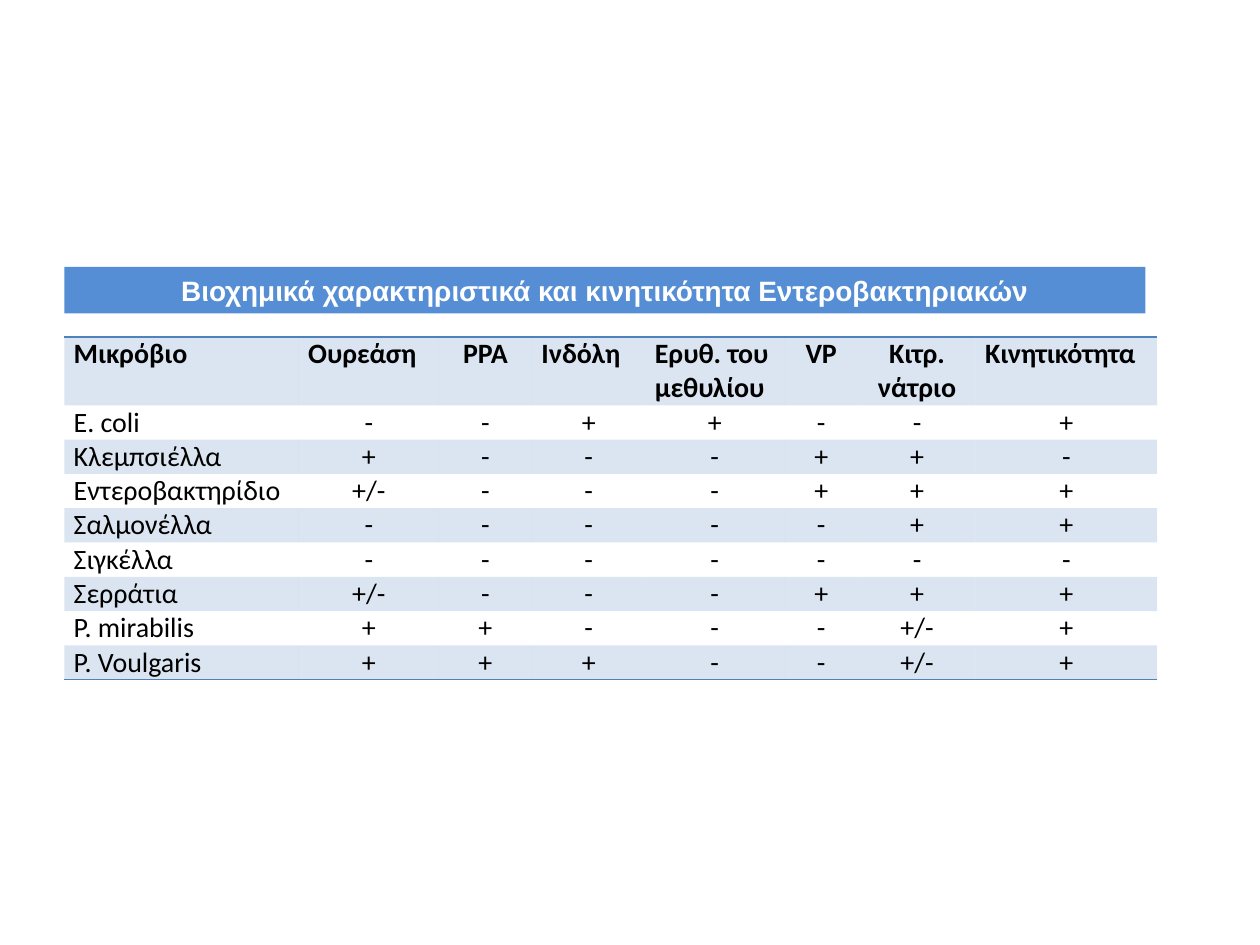
"""Build a slide with a table of biochemical traits of enterobacteria."""
from pptx import Presentation
from pptx import util as u
from pptx.dml import color
from pptx.enum import shapes, text
from pptx.oxml import ns, xmlchemy

ACCENT = "4F81BD"
LEFT = 36.75
ROW_HEIGHT = 19.5
COLUMN_WIDTHS = [134, 80, 53.3, 64.8, 79.2, 42.5, 67, 103.7]
NO_STYLE = "{2D5ABB26-0587-4C30-8999-92F81FD0307C}"
HEADERS = ["Μικρόβιο", "Ουρεάση", "PPA", "Ινδόλη", "Ερυθ. του μεθυλίου",
           "VP", "Κιτρ. νάτριο", "Κινητικότητα"]
CENTERED_HEADERS = {"PPA", "VP", "Κιτρ. νάτριο"}
MICROBES = [
    ("E. coli", "- - + + - - +"),
    ("Κλεμπσιέλλα", "+ - - - + + -"),
    ("Εντεροβακτηρίδιο", "+/- - - - + + +"),
    ("Σαλμονέλλα", "- - - - - + +"),
    ("Σιγκέλλα", "- - - - - - -"),
    ("Σερράτια", "+/- - - - + + +"),
    ("P. mirabilis", "+ + - - - +/- +"),
    ("P. Voulgaris", "+ + + - - +/- +"),
]


def rgb(value):
    """Return the colour for a hex string."""
    return color.RGBColor.from_string(value)


def format_text(frame, font_name, font_color, bold, centered):
    """Format the only paragraph of a text frame."""
    paragraph = frame.paragraphs[0]
    paragraph.alignment = text.PP_ALIGN.CENTER if centered else text.PP_ALIGN.LEFT
    for run in paragraph.runs:
        run.font.name = font_name
        run.font.size = u.Pt(16)
        run.font.bold = bold
        run.font.color.rgb = rgb(font_color)


def add_title_bar(slide, title):
    """Add the coloured bar that carries the title."""
    shape = slide.shapes.add_shape(shapes.MSO_SHAPE.RECTANGLE, u.Pt(LEFT), u.Pt(152.6),
                                   u.Pt(617.8), u.Pt(26.6))
    shape.shadow.inherit = False
    shape.fill.solid()
    shape.fill.fore_color.rgb = rgb("558ED5")
    shape.line.fill.background()
    frame = shape.text_frame
    frame.text = title
    frame.word_wrap = True
    frame.vertical_anchor = text.MSO_ANCHOR.MIDDLE
    format_text(frame, "Arial", "FFFFFF", True, True)


def tint_cell(cell):
    """Fill a cell with the accent colour at 20 % opacity."""
    cell.fill.solid()
    cell.fill.fore_color.rgb = rgb(ACCENT)
    tint = cell._tc.get_or_add_tcPr().find(".//" + ns.qn("a:srgbClr"))
    xmlchemy.OxmlElement("a:alpha")
    alpha = xmlchemy.OxmlElement("a:alpha")
    alpha.set("val", "20000")
    tint.append(alpha)


def add_border(cell, tag):
    """Draw one accent border, named by its XML tag, on a cell."""
    line = xmlchemy.OxmlElement(tag)
    line.set("w", str(u.Pt(1)))
    fill = xmlchemy.OxmlElement("a:solidFill")
    line_color = xmlchemy.OxmlElement("a:srgbClr")
    line_color.set("val", ACCENT)
    fill.append(line_color)
    line.append(fill)
    cell._tc.get_or_add_tcPr().insert(0, line)


def fill_cell(cell, value, bold, centered, banded):
    """Write a value into a cell and style it."""
    cell.margin_left = cell.margin_right = u.Pt(5.4)
    cell.margin_top = cell.margin_bottom = 0
    cell.text_frame.text = value
    format_text(cell.text_frame, "Calibri", "000000", bold, centered)
    if banded:
        tint_cell(cell)
    else:
        cell.fill.background()


def add_traits_table(slide):
    """Add the table with a header row and one row per microbe."""
    rows = [HEADERS] + [[name, *signs.split()] for name, signs in MICROBES]
    frame = slide.shapes.add_table(len(rows), len(HEADERS), u.Pt(LEFT), u.Pt(192.5),
                                   u.Pt(sum(COLUMN_WIDTHS)), u.Pt(ROW_HEIGHT * (len(rows) + 1)))
    table = frame.table
    table._tbl.tblPr.find(ns.qn("a:tableStyleId")).text = NO_STYLE
    for column, width in zip(table.columns, COLUMN_WIDTHS):
        column.width = u.Pt(width)
    for row_index, values in enumerate(rows):
        is_header = row_index == 0
        table.rows[row_index].height = u.Pt(ROW_HEIGHT * (2 if is_header else 1))
        for column_index, value in enumerate(values):
            centered = value in CENTERED_HEADERS if is_header else column_index > 0
            cell = table.cell(row_index, column_index)
            fill_cell(cell, value, is_header, centered, row_index % 2 == 0)
            if is_header:
                add_border(cell, "a:lnT")
            elif row_index == len(rows) - 1:
                add_border(cell, "a:lnB")


def main():
    """Build and save the presentation."""
    presentation = Presentation()
    presentation.slide_width = u.Pt(720)
    presentation.slide_height = u.Pt(540)
    slide = presentation.slides.add_slide(presentation.slide_layouts[6])
    add_traits_table(slide)
    add_title_bar(slide, "Βιοχημικά χαρακτηριστικά και κινητικότητα Εντεροβακτηριακών")
    presentation.save("out.pptx")


if __name__ == "__main__":
    main()
